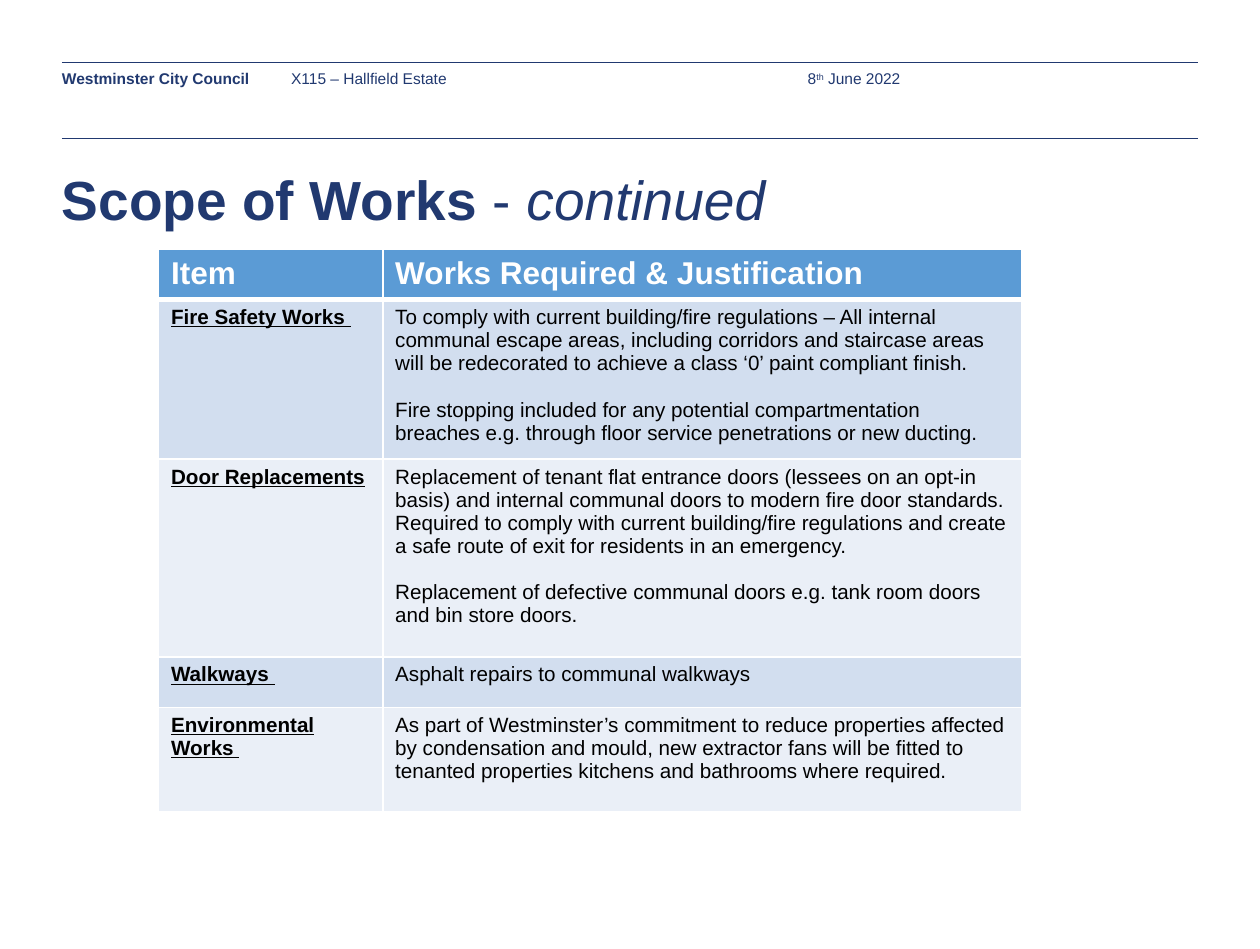
from dataclasses import dataclass

from lxml import etree
from pptx import Presentation
from pptx.dml.color import RGBColor
from pptx.enum.shapes import MSO_CONNECTOR
from pptx.enum.text import MSO_ANCHOR
from pptx.oxml.ns import qn
from pptx.util import Pt

STRAIGHT = MSO_CONNECTOR.STRAIGHT
TOP, MIDDLE = MSO_ANCHOR.TOP, MSO_ANCHOR.MIDDLE


@dataclass(frozen=True)
class Theme:
    font: str = "Arial"
    navy: str = "213970"
    white: str = "FFFFFF"
    black: str = "000000"
    header_fill: str = "5B9BD5"
    bands: tuple = ("D2DEEF", "EAEFF7")
    small: float = 9
    body: float = 12
    heading: float = 18.3
    title: float = 32


THEME = Theme()

COLUMN_WIDTHS = (130.3, 371.5)
ROW_HEIGHTS = (27.4, 87.6, 115, 29.3, 60.8)
HEADINGS = ("Item", "Works Required & Justification")
WORKS = (
    ("Fire Safety Works ", (
        "To comply with current building/fire regulations – All internal communal escape areas, "
        "including corridors and staircase areas will be redecorated to achieve a class ‘0’ paint "
        "compliant finish.",
        "Fire stopping included for any potential compartmentation breaches e.g. through floor "
        "service penetrations or new ducting.")),
    ("Door Replacements ", (
        "Replacement of tenant flat entrance doors (lessees on an opt-in basis) and internal "
        "communal doors to modern fire door standards. Required to comply with current "
        "building/fire regulations and create a safe route of exit for residents in an emergency.",
        "Replacement of defective communal doors e.g. tank room doors and bin store doors.")),
    ("Walkways ", ("Asphalt repairs to communal walkways",)),
    ("Environmental Works ", (
        "As part of Westminster’s commitment to reduce properties affected by condensation and "
        "mould, new extractor fans will be fitted to tenanted properties kitchens and bathrooms "
        "where required.",)),
)


def style(span, size, color, bold=False, italic=False, underline=False):
    font = span.font
    font.name, font.size = THEME.font, Pt(size)
    font.bold, font.italic, font.underline = bold, italic, underline
    font.color.rgb = RGBColor.from_string(color)


def add_text(page, box, parts, size, anchor=TOP, wrap=True):
    """Place one navy paragraph; parts are (text, style options) pairs."""
    shape = page.shapes.add_textbox(*map(Pt, box))
    frame = shape.text_frame
    frame.word_wrap = wrap
    frame.vertical_anchor = anchor
    frame.margin_left = frame.margin_top = frame.margin_right = frame.margin_bottom = 0
    para = frame.paragraphs[0]
    for text, options in parts:
        span = para.add_run()
        span.text = text
        style(span, size, THEME.navy, **options)
    return para


def add_header(page, box):
    left, top, width, height = box
    # Rules above and below
    for y in (top, top + height):
        rule = page.shapes.add_connector(STRAIGHT, Pt(left), Pt(y), Pt(left + width), Pt(y))
        rule.line.color.rgb = RGBColor.from_string(THEME.navy)
        rule.line.width = Pt(0.25)
        etree.SubElement(rule._element.spPr, qn("a:effectLst"))
    # Council, project and date
    text_top = top + 4.3
    add_text(page, (left, text_top, 110, 10.8), [("Westminster City Council", {"bold": True})],
             THEME.small, wrap=False)
    add_text(page, (left + 133.2, text_top, 257, 29.5), [("X115 – Hallfield Estate", {})],
             THEME.small)
    date = add_text(page, (left + 433.4, text_top, 165, 10.8),
                    [("8", {}), ("th", {}), (" June 2022", {})], THEME.small, anchor=MIDDLE)
    date.runs[1].font._element.set("baseline", "30000")


def add_title(page, box):
    para = add_text(page, box, [("Scope of Works ", {"bold": True}), ("- ", {}),
                                ("continued", {"italic": True})], THEME.title)
    para.line_spacing = Pt(39)


def fill_cell(cell, paragraphs, fill, size, color, bottom=1, **options):
    cell.text_frame.text = "\n".join(paragraphs)
    for index, para in enumerate(cell.text_frame.paragraphs):
        if index:
            para.space_before = Pt(13.4)
        for span in para.runs:
            style(span, size, color, **options)
    # White borders come before the fill in the cell properties
    properties = cell._tc.get_or_add_tcPr()
    for side, width in (("L", 1), ("R", 1), ("T", 1), ("B", bottom)):
        edge = etree.SubElement(properties, qn(f"a:ln{side}"), w=str(Pt(width)))
        solid = etree.SubElement(edge, qn("a:solidFill"))
        etree.SubElement(solid, qn("a:srgbClr"), val=THEME.white)
    cell.fill.solid()
    cell.fill.fore_color.rgb = RGBColor.from_string(fill)


def add_works_table(page, box):
    table = page.shapes.add_table(len(ROW_HEIGHTS), len(COLUMN_WIDTHS), *map(Pt, box)).table
    for column, width in zip(table.columns, COLUMN_WIDTHS):
        column.width = Pt(width)
    for row, height in zip(table.rows, ROW_HEIGHTS):
        row.height = Pt(height)
    # Heading row
    for index, heading in enumerate(HEADINGS):
        fill_cell(table.cell(0, index), [heading], THEME.header_fill, THEME.heading,
                  THEME.white, bottom=3, bold=True)
    # Banded rows
    for index, (item, reasons) in enumerate(WORKS):
        band = THEME.bands[index % 2]
        fill_cell(table.cell(index + 1, 0), [item], band, THEME.body, THEME.black,
                  bold=True, underline=True)
        fill_cell(table.cell(index + 1, 1), reasons, band, THEME.body, THEME.black)


def main():
    deck = Presentation()
    deck.slide_width, deck.slide_height = Pt(732.24), Pt(551.52)
    page = deck.slides.add_slide(deck.slide_layouts[6])
    add_header(page, (36, 36, 660.2, 44.6))
    add_title(page, (36, 95.8, 660.2, 59))
    add_works_table(page, (92.2, 145, sum(COLUMN_WIDTHS), sum(ROW_HEIGHTS)))
    deck.save("out.pptx")


if __name__ == "__main__":
    main()
